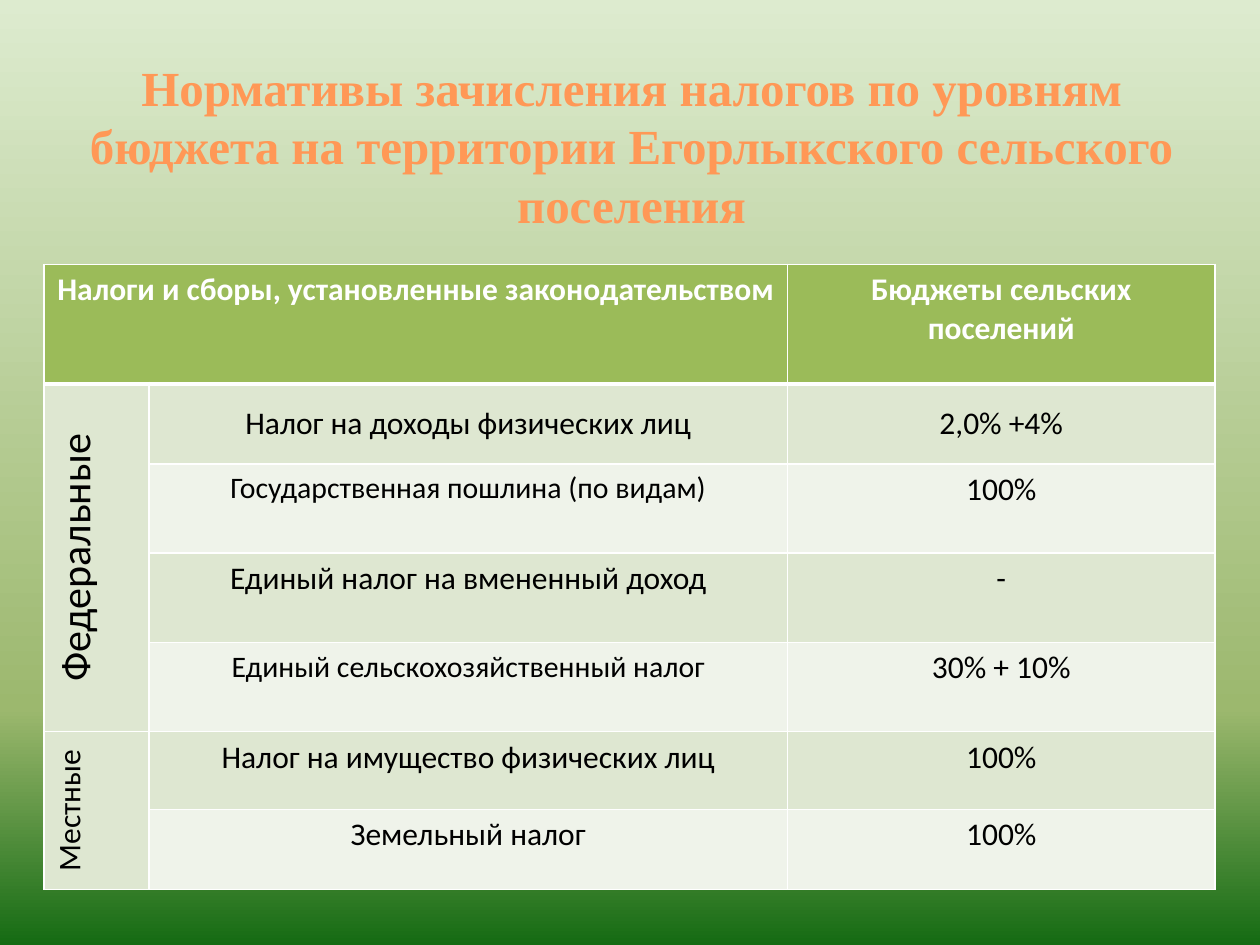
from copy import deepcopy
from dataclasses import dataclass

from lxml.etree import SubElement
from pptx import Presentation
from pptx.dml.color import RGBColor
from pptx.enum.text import MSO_ANCHOR, PP_ALIGN
from pptx.oxml.ns import qn
from pptx.util import Cm, Pt

COLORS = {
    "title": "FF9856",
    "white": "FFFFFF",
    "text": "000000",
    "header": "9BBB59",
    "band_dark": "DEE7D1",
    "band_light": "EFF3EA",
}
BACKGROUND_STOPS = [(0, "DDEBCF"), (0.75, "9CB86E"), (1, "156B13")]
COLUMN_WIDTHS = [2.11, 12.88, 8.61]
ROW_HEIGHTS = [2.41, 1.61, 1.8, 1.8, 1.8, 1.57, 1.61]


@dataclass
class Tax:
    name: str
    share: str
    size: int = 18
    anchor: MSO_ANCHOR = MSO_ANCHOR.TOP


@dataclass
class TaxLevel:
    name: str
    size: int
    anchor: MSO_ANCHOR
    taxes: list[Tax]


LEVELS = [
    TaxLevel("Федеральные", 24, MSO_ANCHOR.TOP, [
        Tax("Налог на доходы физических лиц", "2,0% +4%", anchor=MSO_ANCHOR.MIDDLE),
        Tax("Государственная пошлина (по видам)", "100%", size=17),
        Tax("Единый налог на вмененный доход", "-"),
        Tax("Единый сельскохозяйственный налог", "30% + 10%", size=17),
    ]),
    TaxLevel("Местные", 18, MSO_ANCHOR.MIDDLE, [
        Tax("Налог на имущество физических лиц", "100%"),
        Tax("Земельный налог", "100%"),
    ]),
]


def rgb(name: str) -> RGBColor:
    return RGBColor.from_string(COLORS[name])


def write_text(frame, text: str, *, size: int, color: str, font: str = "Calibri",
               bold: bool = False) -> None:
    para = frame.paragraphs[0]
    para.alignment = PP_ALIGN.CENTER
    span = para.add_run()
    span.text = text
    span.font.name = font
    span.font.size = Pt(size)
    span.font.bold = bold
    span.font.color.rgb = rgb(color)


def style_cell(cell, fill: str, top: float = 1, bottom: float = 1) -> None:
    """Give the cell white borders (widths in points) and a solid fill."""
    properties = cell._tc.get_or_add_tcPr()
    for side, width in (("L", 1), ("R", 1), ("T", top), ("B", bottom)):
        line = SubElement(properties, qn(f"a:ln{side}"), w=str(Pt(width)))
        solid = SubElement(line, qn("a:solidFill"))
        SubElement(solid, qn("a:srgbClr"), val=COLORS["white"])
    cell.fill.solid()
    cell.fill.fore_color.rgb = rgb(fill)


def paint_background(page) -> None:
    fill = page.background.fill
    fill.gradient()
    fill.gradient_angle = 270
    stop_list = page.element.find(".//" + qn("a:gsLst"))
    stop_list.append(deepcopy(stop_list[-1]))
    for stop, (position, color) in zip(fill.gradient_stops, BACKGROUND_STOPS):
        stop.position = position
        stop.color.rgb = RGBColor.from_string(color)


def add_title(page) -> None:
    title = page.shapes.title
    title.left, title.top, title.width, title.height = Cm(1.3), Cm(0.53), Cm(22.86), Cm(4.8)
    title.text_frame.vertical_anchor = MSO_ANCHOR.MIDDLE
    write_text(title.text_frame,
               "Нормативы зачисления налогов по уровням бюджета на территории "
               "Егорлыкского сельского поселения",
               size=28, color="title", font="Times New Roman", bold=True)


def add_tax_table(page) -> None:
    table = page.shapes.add_table(
        len(ROW_HEIGHTS), len(COLUMN_WIDTHS), Cm(0.89), Cm(5.33),
        Cm(sum(COLUMN_WIDTHS)), Cm(sum(ROW_HEIGHTS))).table
    table.first_row = table.horz_banding = False
    for column, width in zip(table.columns, COLUMN_WIDTHS):
        column.width = Cm(width)
    for row, height in zip(table.rows, ROW_HEIGHTS):
        row.height = Cm(height)

    # Fills and borders: header, then alternating bands
    for index, row in enumerate(table.rows):
        band = "band_dark" if index % 2 else "band_light"
        for cell in row.cells:
            style_cell(cell, band if index else "header",
                       top=3 if index == 1 else 1, bottom=1 if index else 3)

    # Header
    table.cell(0, 0).merge(table.cell(0, 1))
    for column, heading in ((0, "Налоги и сборы, установленные законодательством"),
                            (2, "Бюджеты сельских поселений")):
        write_text(table.cell(0, column).text_frame, heading,
                   size=18, color="white", bold=True)

    # Tax levels and their taxes
    first = 1
    for level in LEVELS:
        label = table.cell(first, 0)
        label.merge(table.cell(first + len(level.taxes) - 1, 0))
        label.fill.fore_color.rgb = rgb("band_dark")
        label.vertical_anchor = level.anchor
        label._tc.tcPr.set("vert", "vert270")
        write_text(label.text_frame, level.name, size=level.size, color="text")
        for row, tax in enumerate(level.taxes, first):
            for column, text, size in ((1, tax.name, tax.size), (2, tax.share, 18)):
                cell = table.cell(row, column)
                cell.vertical_anchor = tax.anchor
                write_text(cell.text_frame, text, size=size, color="text")
        first += len(level.taxes)


def main() -> None:
    deck = Presentation()
    deck.slide_width, deck.slide_height = Cm(25.4), Cm(19.05)
    page = deck.slides.add_slide(deck.slide_layouts.get_by_name("Title Only"))
    paint_background(page)
    add_title(page)
    add_tax_table(page)
    deck.save("out.pptx")


if __name__ == "__main__":
    main()
